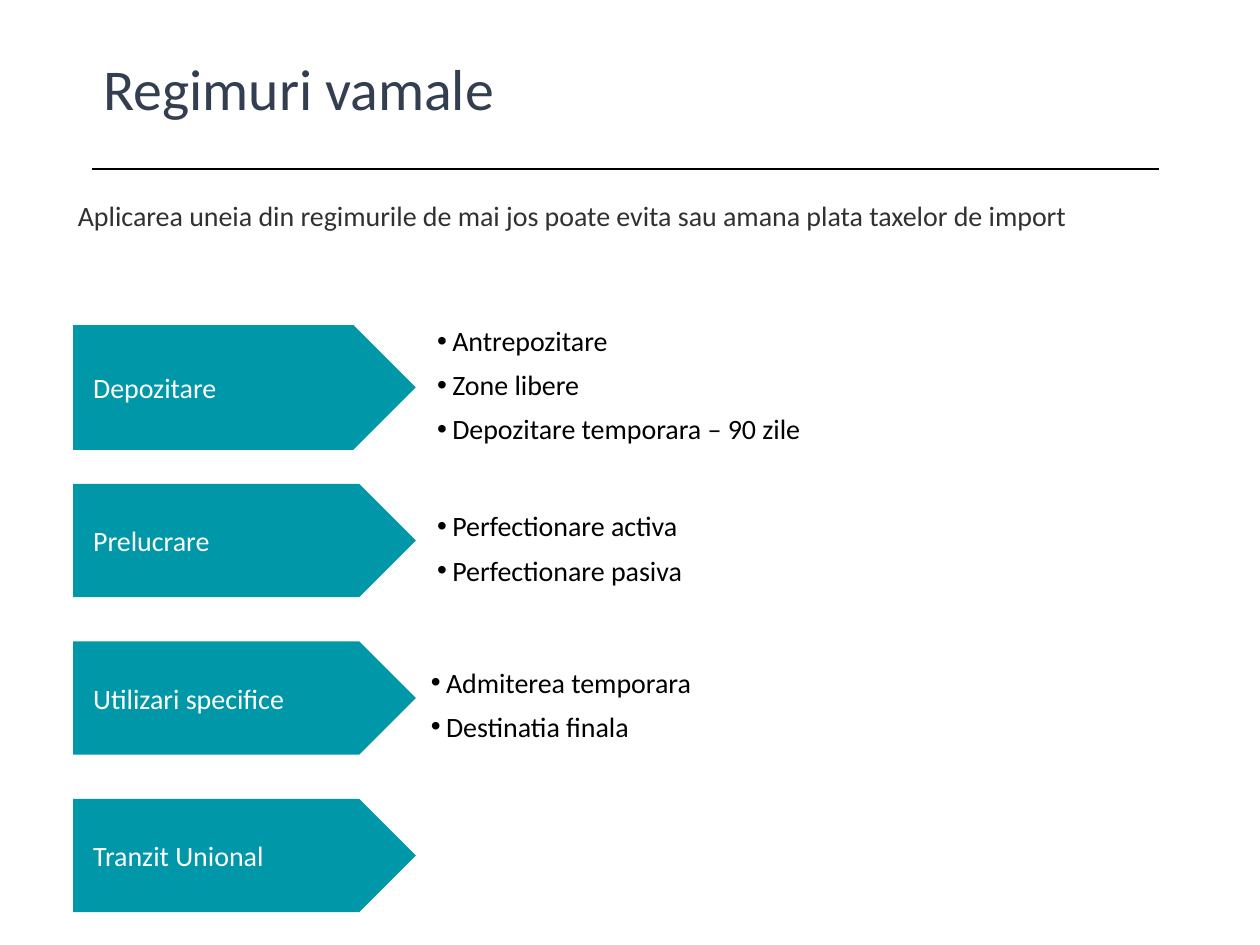
from lxml import etree
from pptx import Presentation
from pptx.dml.color import RGBColor
from pptx.enum.shapes import MSO_CONNECTOR, MSO_SHAPE
from pptx.enum.text import MSO_ANCHOR, PP_ALIGN
from pptx.oxml.ns import qn
from pptx.util import Inches, Pt

PENTAGON = MSO_SHAPE.PENTAGON
STRAIGHT = MSO_CONNECTOR.STRAIGHT
TOP, MIDDLE = MSO_ANCHOR.TOP, MSO_ANCHOR.MIDDLE
LEFT = PP_ALIGN.LEFT

FONT = "Calibri"
COLORS = {
    "title": "333F50",
    "intro": "313131",
    "text": "000000",
    "arrow": "0097A9",
    "label": "FFFFFF",
}
REGIMES = [
    ("Depozitare", 2.58, 0.99, 3.47, 2.57,
     ["Antrepozitare", "Zone libere", "Depozitare temporara – 90 zile"]),
    ("Prelucrare", 3.84, 0.9, 3.47, 4.04,
     ["Perfectionare activa", "Perfectionare pasiva"]),
    ("Utilizari specifice", 5.09, 0.9, 3.42, 5.28,
     ["Admiterea temporara", "Destinatia finala"]),
    ("Tranzit Unional", 6.34, 0.9, 3.47, 6.34, []),
]


def rgb(name):
    return RGBColor.from_string(COLORS[name])


def add_bullet(p, indent):
    pPr = p._p.get_or_add_pPr()
    pPr.set("marL", str(indent))
    pPr.set("indent", str(-indent))
    etree.SubElement(pPr, qn("a:buFont")).set("typeface", "Arial")
    etree.SubElement(pPr, qn("a:buChar")).set("char", "•")


def write_text(sp, lines, size=16, color="text", insets=(0, 0, 0, 0),
               anchor=TOP, spacing=None, before=0, bullet=False):
    tf = sp.text_frame
    tf.word_wrap = True
    tf.vertical_anchor = anchor
    tf.margin_left, tf.margin_top, tf.margin_right, tf.margin_bottom = map(Inches, insets)
    for i, line in enumerate(lines):
        p = tf.paragraphs[0] if i == 0 else tf.add_paragraph()
        p.alignment = LEFT
        if spacing:
            p.line_spacing = spacing
        if i and before:
            p.space_before = Pt(before)
        if bullet:
            add_bullet(p, Inches(0.12))
        r = p.add_run()
        r.text = line
        r.font.name = FONT
        r.font.size = Pt(size)
        r.font.color.rgb = rgb(color)


def add_text(s, box, lines, **fmt):
    write_text(s.shapes.add_textbox(*map(Inches, box)), lines, **fmt)


def add_header(s, left, top, width, height):
    add_text(s, (left, top, width, height), ["Regimuri vamale"],
             size=33, color="title", spacing=0.9)
    rule = s.shapes.add_connector(STRAIGHT, Inches(0.73), Inches(1.34),
                                  Inches(9.2), Inches(1.34))
    rule.line.color.rgb = rgb("text")
    rule.line.width = Pt(1)
    etree.SubElement(rule._element.spPr, qn("a:effectLst"))


def add_intro(s, left, top, width, height):
    add_text(s, (left, top, width, height),
             ["Aplicarea uneia din regimurile de mai jos poate evita sau amana plata taxelor de import"],
             color="intro", insets=(0.1, 0.05, 0.1, 0.05))


def add_arrow(s, left, top, width, height, label):
    sp = s.shapes.add_shape(PENTAGON, *map(Inches, (left, top, width, height)))
    sp.shadow.inherit = False
    sp.fill.solid()
    sp.fill.fore_color.rgb = rgb("arrow")
    sp.line.fill.background()
    write_text(sp, [label], color="label", insets=(0.16, 0.1, 0.1, 0.1), anchor=MIDDLE)


def add_regimes(s, left, width, list_width):
    for label, top, height, list_left, list_top, items in REGIMES:
        add_arrow(s, left, top, width, height, label)
        if items:
            add_text(s, (list_left, list_top, list_width, 0.9), items,
                     before=6, bullet=True)


def main():
    prs = Presentation()
    prs.slide_width, prs.slide_height = Inches(10), Inches(7.5)
    s = prs.slides.add_slide(prs.slide_layouts[6])
    add_header(s, 0.82, 0.48, 8.6, 0.68)
    add_intro(s, 0.52, 1.53, 9, 0.4)
    add_regimes(s, 0.58, 2.72, 6.3)
    prs.save("out.pptx")


if __name__ == "__main__":
    main()
